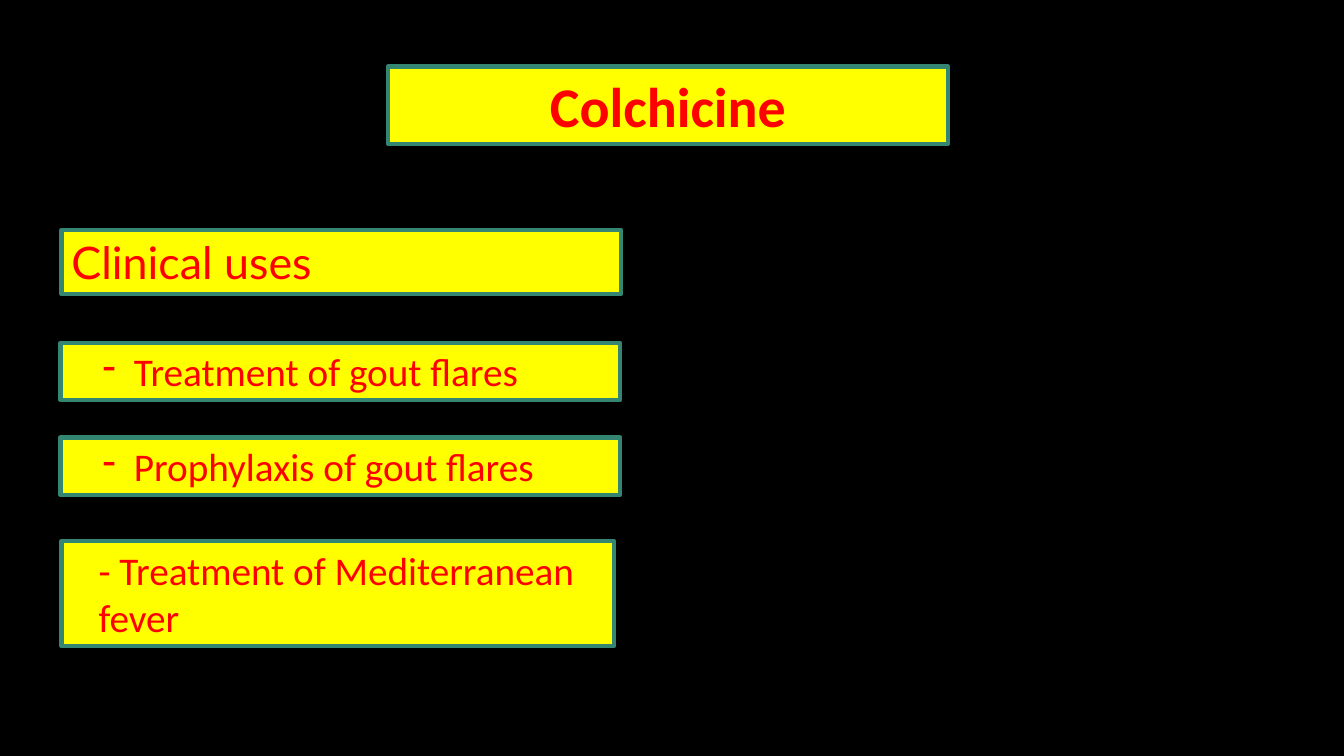
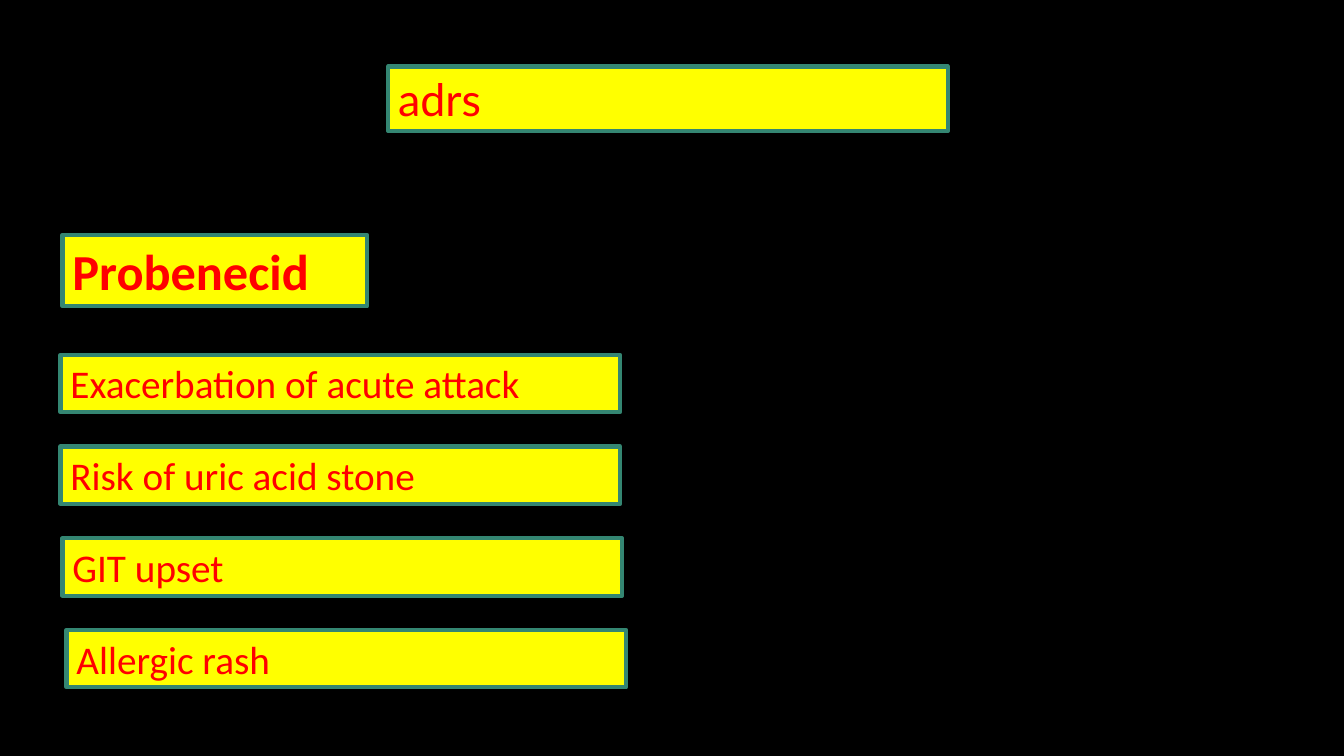
from lxml.etree import SubElement
from pptx import Presentation
from pptx.dml.color import RGBColor
from pptx.enum.text import MSO_AUTO_SIZE, PP_ALIGN
from pptx.oxml.ns import qn
from pptx.util import Inches, Pt

BLACK = RGBColor(0x00, 0x00, 0x00)
YELLOW = RGBColor(0xFF, 0xFF, 0x00)
RED = RGBColor(0xFF, 0x00, 0x00)
TEAL = RGBColor(0x34, 0x86, 0x72)

BODY_FONT = "Calibri"
HEADING_FONT = "Lato"
LABEL_WIDTH = 5.55
LABEL_HEIGHT = 0.57
HEADING_HEIGHT = 0.64
TITLE_LEFT, TITLE_TOP = 3.85, 0.66


def add_page(deck):
    page = deck.slides.add_slide(deck.slide_layouts[6])
    page.background.fill.solid()
    page.background.fill.fore_color.rgb = BLACK
    return page


def add_label(page, text, left, top, width=LABEL_WIDTH, height=LABEL_HEIGHT,
              size=28, font=BODY_FONT, bold=False):
    """Add a yellow framed label and return its paragraph."""
    box = page.shapes.add_textbox(Inches(left), Inches(top), Inches(width), Inches(height))
    box.fill.solid()
    box.fill.fore_color.rgb = YELLOW
    box.line.color.rgb = TEAL
    box.line.width = Pt(3)
    box.text_frame.word_wrap = True
    box.text_frame.auto_size = MSO_AUTO_SIZE.SHAPE_TO_FIT_TEXT
    para = box.text_frame.paragraphs[0]
    para.text = text
    para.font.size = Pt(size)
    para.font.name = font
    para.font.bold = bold
    para.font.color.rgb = RED
    return para


def add_heading(page, text, left, top):
    add_label(page, text, left, top, height=HEADING_HEIGHT, size=32, font=HEADING_FONT)


def indent(para, margin, first_line=0):
    properties = para._p.get_or_add_pPr()
    properties.set("marL", str(Inches(margin)))
    properties.set("indent", str(Inches(first_line)))
    return properties


def add_dash_label(page, text, left, top):
    para = add_label(page, text, left, top)
    para.level = 1
    properties = indent(para, 0.63, -0.31)
    dash = SubElement(properties, qn("a:buChar"))
    dash.set("char", "-")
    properties.insert(0, dash)  # bullets come before the default run properties


def build_uses(deck):
    page = add_page(deck)
    title = add_label(page, "Colchicine", TITLE_LEFT, TITLE_TOP, height=0.77, size=40, bold=True)
    title.alignment = PP_ALIGN.CENTER
    add_heading(page, "Clinical uses", 0.61, 2.28)
    add_dash_label(page, "Treatment of gout flares", 0.6, 3.4)
    add_dash_label(page, "Prophylaxis of gout flares", 0.6, 4.34)
    fever = add_label(page, "- Treatment of Mediterranean fever", 0.61, 5.37,
                      width=5.48, height=1.04)
    indent(fever, 0.27)


def build_reactions(deck):
    page = add_page(deck)
    add_heading(page, "adrs", TITLE_LEFT, TITLE_TOP)
    add_label(page, "Probenecid", 0.62, 2.33, width=3.02, height=0.71, size=36, bold=True)
    # Reactions at an equal pitch
    reactions = [
        ("Exacerbation of acute attack", 0.6),
        ("Risk of uric acid stone", 0.6),
        ("GIT upset", 0.62),
        ("Allergic rash", 0.66),
    ]
    for row, (text, left) in enumerate(reactions):
        add_label(page, text, left, 3.52 + row * 0.91)


def main():
    deck = Presentation()
    deck.slide_width = Inches(13.33)
    deck.slide_height = Inches(7.5)
    build_uses(deck)
    build_reactions(deck)
    deck.save("out.pptx")


if __name__ == "__main__":
    main()
